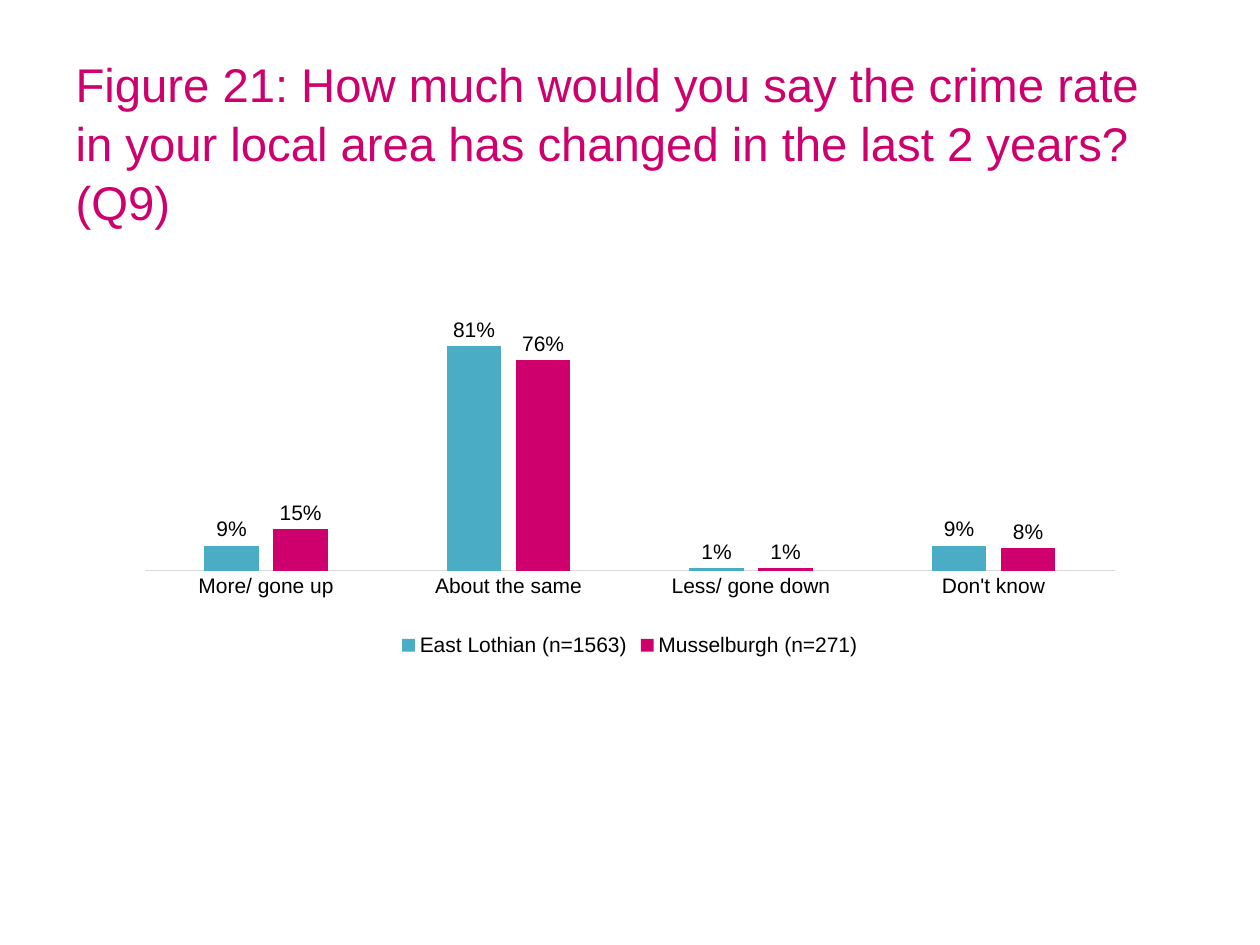
from lxml import etree
from pptx import Presentation
from pptx.chart.data import CategoryChartData
from pptx.dml.color import RGBColor
from pptx.enum.chart import (XL_CHART_TYPE, XL_LABEL_POSITION,
                             XL_LEGEND_POSITION, XL_TICK_MARK)
from pptx.enum.text import MSO_ANCHOR, MSO_AUTO_SIZE, PP_ALIGN
from pptx.oxml.ns import qn
from pptx.util import Pt

COLUMN = XL_CHART_TYPE.COLUMN_CLUSTERED
OUTSIDE = XL_LABEL_POSITION.OUTSIDE_END
BOTTOM = XL_LEGEND_POSITION.BOTTOM
NO_TICK = XL_TICK_MARK.NONE

BLACK = RGBColor(0x00, 0x00, 0x00)
GREY = RGBColor(0xD9, 0xD9, 0xD9)
TEAL = RGBColor(0x4B, 0xAC, 0xC6)
PINK = RGBColor(0xCD, 0x00, 0x6E)

TITLE = ("Figure 21: How much would you say the crime rate in your "
         "local area has changed in the last 2 years? (Q9)")
ANSWERS = ["More/ gone up", "About the same", "Less/ gone down", "Don't know"]
AREAS = [
    ("East Lothian (n=1563)", TEAL, [0.09, 0.81, 0.01, 0.09]),
    ("Musselburgh (n=271)", PINK, [0.15, 0.76, 0.01, 0.08]),
]
PLOT = {"x": 0.02, "y": 0.1, "w": 0.96, "h": 0.66}


def style(font, size, color):
    font.name = "Arial"
    font.size = Pt(size)
    font.color.rgb = color


def add_title(slide):
    title = slide.shapes.title
    title.left, title.top = Pt(36), Pt(21.6)
    title.width, title.height = Pt(648), Pt(118)
    frame = title.text_frame
    frame.text = TITLE
    frame.word_wrap = True
    frame.auto_size = MSO_AUTO_SIZE.NONE
    frame.vertical_anchor = MSO_ANCHOR.MIDDLE
    para = frame.paragraphs[0]
    para.alignment = PP_ALIGN.LEFT
    para.line_spacing = 1.04
    style(para.font, 27, PINK)


def place_plot(chart):
    area = chart.element.find(".//" + qn("c:plotArea"))
    for old in area.findall(qn("c:layout")):
        area.remove(old)
    layout = etree.Element(qn("c:layout"))
    area.insert(0, layout)
    manual = etree.SubElement(layout, qn("c:manualLayout"))
    parts = [("layoutTarget", "inner"), ("xMode", "edge"), ("yMode", "edge")]
    for tag, val in parts + list(PLOT.items()):
        etree.SubElement(manual, qn("c:" + tag)).set("val", str(val))


def add_chart(slide):
    data = CategoryChartData(number_format="0%")
    data.categories = ANSWERS
    for name, _, vals in AREAS:
        data.add_series(name, vals)
    chart = slide.shapes.add_chart(
        COLUMN, Pt(71.3), Pt(162), Pt(577.4), Pt(216), data).chart
    style(chart.font, 12, BLACK)
    chart.has_title = False
    chart.has_legend = True
    chart.legend.position = BOTTOM
    chart.legend.include_in_layout = False
    style(chart.legend.font, 12, BLACK)

    base = chart.category_axis
    base.major_tick_mark = base.minor_tick_mark = NO_TICK
    base.format.line.color.rgb = GREY
    base.format.line.width = Pt(0.75)
    style(base.tick_labels.font, 12, BLACK)

    scale = chart.value_axis
    scale.minimum_scale, scale.maximum_scale = 0, 0.9
    scale.has_major_gridlines = False
    scale.visible = False
    scale.tick_labels.number_format = "0%"
    scale.tick_labels.number_format_is_linked = False

    plot = chart.plots[0]
    plot.gap_width, plot.overlap = 219, -27
    plot.vary_by_categories = False
    for series, (_, color, _) in zip(plot.series, AREAS):
        series.format.fill.solid()
        series.format.fill.fore_color.rgb = color
        series.invert_if_negative = False
        labels = series.data_labels
        labels.show_value = True
        labels.position = OUTSIDE
        labels.number_format = "0%"
        labels.number_format_is_linked = False
        style(labels.font, 12, BLACK)
    place_plot(chart)


def main():
    deck = Presentation()
    deck.slide_width, deck.slide_height = Pt(720), Pt(540)
    slide = deck.slides.add_slide(deck.slide_layouts[5])
    add_title(slide)
    add_chart(slide)
    deck.save("out.pptx")


if __name__ == "__main__":
    main()
